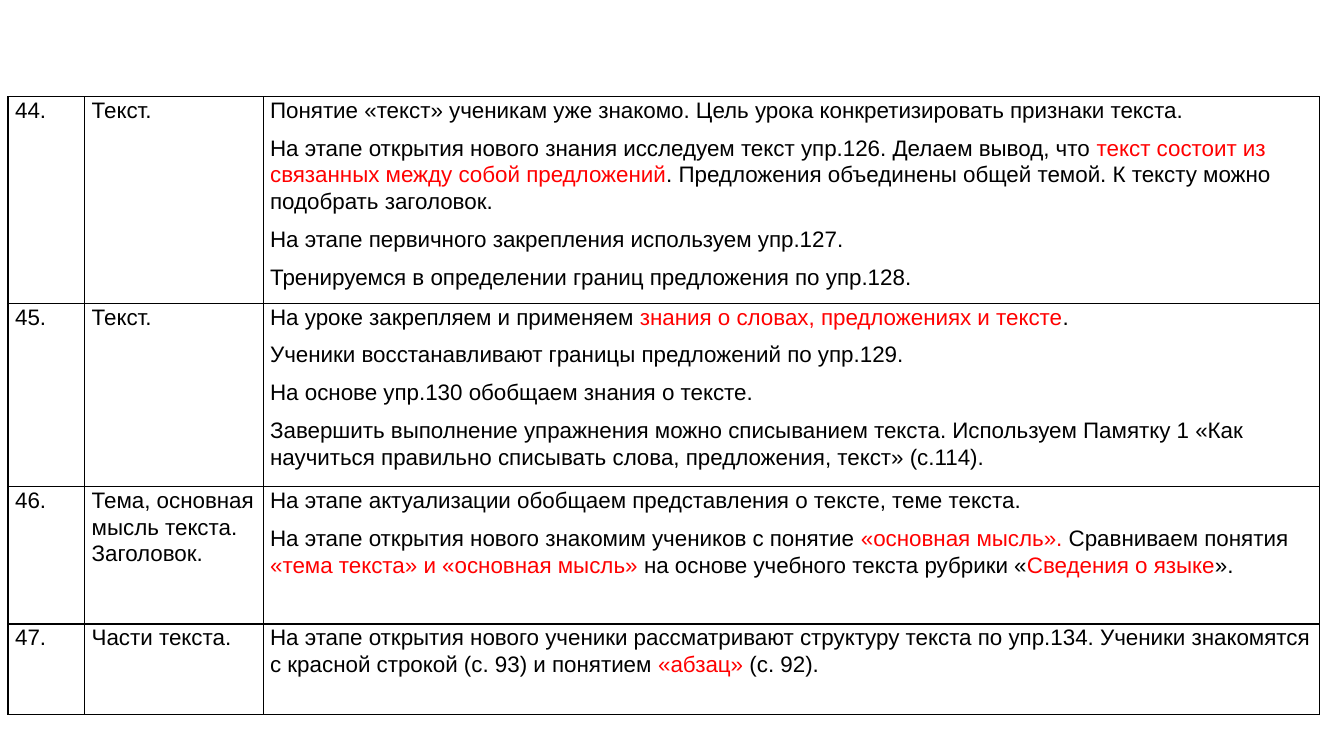
from dataclasses import dataclass

import pptx
import pptx.dml.color
import pptx.oxml
import pptx.oxml.ns
import pptx.slide
import pptx.table
import pptx.text.text
import pptx.util

Inches = pptx.util.Inches
Pt = pptx.util.Pt

COLORS = {"text": "000000", "accent": "FF0000", "border": "000000"}
FONT_NAME = "Arial"
FONT_SIZE = 16
COLUMN_WIDTHS = (0.76, 1.77, 10.48)
TABLE_LEFT = 0.08
ACCENT_MARK = "*"  # encloses the red parts of a paragraph


@dataclass
class Lesson:
    number: str
    topic: str
    notes: list[str]
    height: float


@dataclass
class LessonTable:
    top: float
    lessons: list[Lesson]


# Content
LESSON_TABLES = [
    LessonTable(0.96, [
        Lesson("44.", "Текст.", [
            "Понятие «текст» ученикам уже знакомо. Цель урока конкретизировать признаки текста.",
            "На этапе открытия нового знания исследуем текст упр.126. Делаем вывод, что "
            "*текст состоит из связанных между собой предложений*. Предложения объединены "
            "общей темой. К тексту можно подобрать заголовок.",
            "На этапе первичного закрепления используем упр.127.",
            "Тренируемся в определении границ предложения по упр.128.",
        ], 2.05),
        Lesson("45.", "Текст.", [
            "На уроке закрепляем и применяем *знания о словах, предложениях и тексте*.",
            "Ученики восстанавливают границы предложений по упр.129.",
            "На основе упр.130 обобщаем знания о тексте.",
            "Завершить выполнение упражнения можно списыванием текста. Используем Памятку 1 "
            "«Как научиться правильно списывать слова, предложения, текст» (с.114).",
        ], 1.82),
        Lesson("46.", "Тема, основная мысль текста. Заголовок.", [
            "На этапе актуализации обобщаем представления о тексте, теме текста.",
            "На этапе открытия нового знакомим учеников с понятие *«основная мысль». *"
            "Сравниваем понятия *«тема текста» и «основная мысль» *на основе учебного "
            "текста рубрики «*Сведения о языке*».",
        ], 1.36),
    ]),
    LessonTable(6.19, [
        Lesson("47.", "Части текста.", [
            "На этапе открытия нового ученики рассматривают структуру текста по упр.134. "
            "Ученики знакомятся с красной строкой (с. 93) и понятием *«абзац» *(с. 92).",
        ], 0.9),
    ]),
]


def write_paragraph(paragraph: pptx.text.text._Paragraph, marked_text: str) -> None:
    paragraph.line_spacing = 1.07
    paragraph.space_after = Pt(8)
    for index, part in enumerate(marked_text.split(ACCENT_MARK)):
        run = paragraph.add_run()
        run.text = part
        run.font.name = FONT_NAME
        run.font.size = Pt(FONT_SIZE)
        color = COLORS["accent" if index % 2 else "text"]
        run.font.color.rgb = pptx.dml.color.RGBColor.from_string(color)


def add_borders(cell: pptx.table._Cell) -> None:
    properties = cell._tc.get_or_add_tcPr()
    for side in ("lnL", "lnR", "lnT", "lnB"):
        properties.append(pptx.oxml.parse_xml(
            f'<a:{side} {pptx.oxml.ns.nsdecls("a")} w="{Pt(1)}"><a:solidFill>'
            f'<a:srgbClr val="{COLORS["border"]}"/></a:solidFill></a:{side}>'))


def fill_cell(cell: pptx.table._Cell, paragraphs: list[str]) -> None:
    cell.margin_left = cell.margin_right = Inches(0.07)
    cell.margin_top = cell.margin_bottom = 0
    add_borders(cell)
    cell.fill.background()
    text_frame = cell.text_frame
    for index, marked_text in enumerate(paragraphs):
        paragraph = text_frame.add_paragraph() if index else text_frame.paragraphs[0]
        write_paragraph(paragraph, marked_text)


def add_lesson_table(slide: pptx.slide.Slide, lesson_table: LessonTable) -> None:
    lessons = lesson_table.lessons
    table = slide.shapes.add_table(
        len(lessons), len(COLUMN_WIDTHS), Inches(TABLE_LEFT), Inches(lesson_table.top),
        Inches(sum(COLUMN_WIDTHS)), Inches(sum(lesson.height for lesson in lessons))).table
    table.first_row = False
    table.horz_banding = False
    for column, width in zip(table.columns, COLUMN_WIDTHS):
        column.width = Inches(width)
    for row, lesson in zip(table.rows, lessons):
        row.height = Inches(lesson.height)
        contents = ([lesson.number], [lesson.topic], lesson.notes)
        for cell, paragraphs in zip(row.cells, contents):
            fill_cell(cell, paragraphs)


def main() -> None:
    presentation = pptx.Presentation()
    presentation.slide_width = Inches(13.33)
    presentation.slide_height = Inches(7.5)
    slide = presentation.slides.add_slide(presentation.slide_layouts[6])

    # Lesson plan
    for lesson_table in LESSON_TABLES:
        add_lesson_table(slide, lesson_table)

    presentation.save("out.pptx")


if __name__ == "__main__":
    main()
